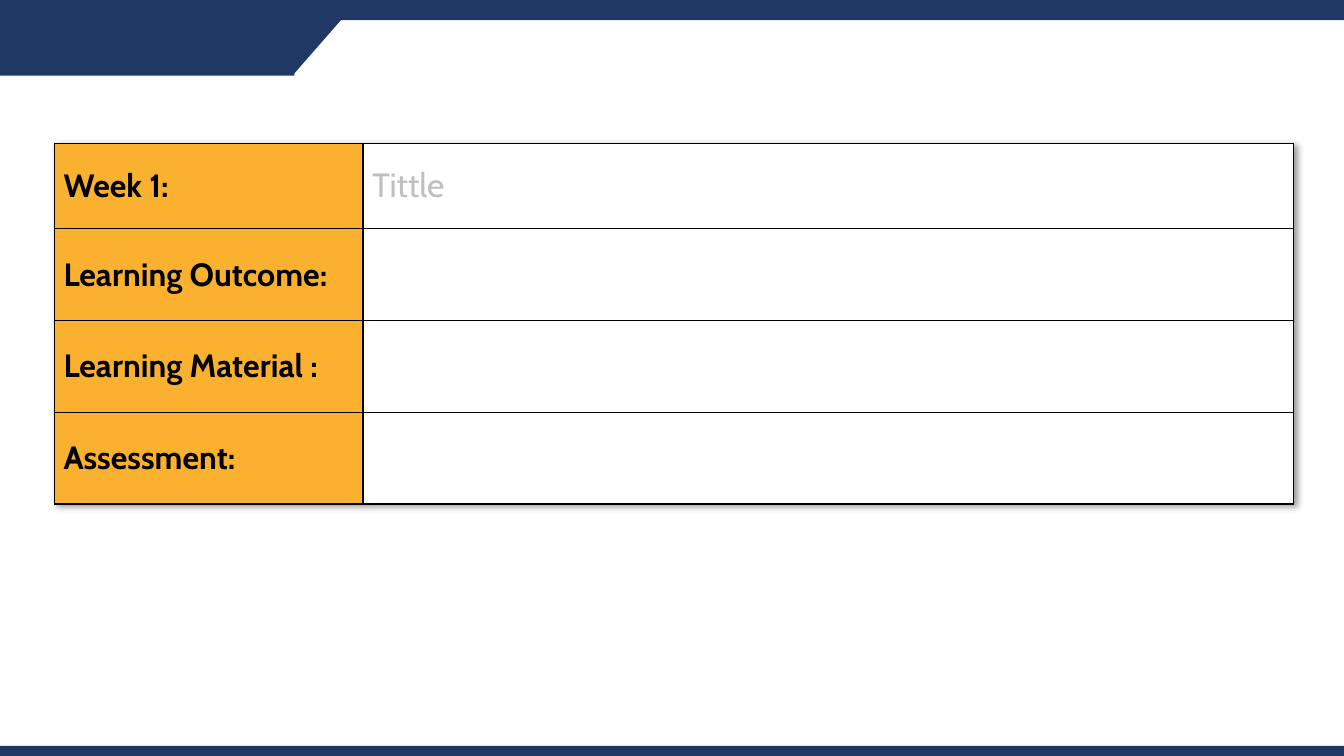
import pptx
import pptx.dml.color
import pptx.enum.shapes
import pptx.enum.text
import pptx.oxml
import pptx.oxml.ns
import pptx.util

NAVY, AMBER, WHITE, BLACK, GRAY = "203864", "FAB12F", "FFFFFF", "000000", "BFBFBF"
FONT = "Cabin"
ROWS = [
    ("Week 1:", "Tittle"),
    ("Learning Outcome:", ""),
    ("Learning Material :", ""),
    ("Assessment:", ""),
]
COLUMN_WIDTHS = [3.06, 9.23]
ROW_HEIGHTS = [0.85] + [0.91] * 3
TABLE_LEFT, TABLE_TOP = 0.54, 1.42
RECT = pptx.enum.shapes.MSO_SHAPE.RECTANGLE
TRIANGLE = pptx.enum.shapes.MSO_SHAPE.RIGHT_TRIANGLE
BANDS = [
    (RECT, -0.03, 0.02, 2.95, 0.73),
    (RECT, 0, 0, 13.41, 0.2),
    (TRIANGLE, 2.91, 0.1, 0.56, 0.64),
    (RECT, -0.04, 7.4, 13.41, 0.1),
]
NS = pptx.oxml.ns.nsdecls("a")
inch = pptx.util.Inches


def rgb(value):
    return pptx.dml.color.RGBColor.from_string(value)


def add_band(slide, kind, *box):
    s = slide.shapes.add_shape(kind, *map(inch, box))
    s.shadow.inherit = False
    s.fill.solid()
    s.fill.fore_color.rgb = rgb(NAVY)
    s.line.fill.background()
    if kind == TRIANGLE:
        s._element.spPr.xfrm.set("flipV", "1")


def set_borders(cell, widths):
    tcPr = cell._tc.get_or_add_tcPr()
    for i, (side, width) in enumerate(widths.items()):
        tcPr.insert(i, pptx.oxml.parse_xml(
            f'<a:ln{side} {NS} w="{pptx.util.Pt(width)}"><a:solidFill>'
            f'<a:srgbClr val="{BLACK}"/></a:solidFill></a:ln{side}>'))


def fill_cell(cell, text, column):
    label = column == 0
    cell.fill.solid()
    cell.fill.fore_color.rgb = rgb(AMBER if label else WHITE)
    cell.vertical_anchor = pptx.enum.text.MSO_ANCHOR.MIDDLE
    cell.margin_left = cell.margin_right = inch(0.09)
    cell.margin_top = cell.margin_bottom = inch(0.04)
    set_borders(cell, {"L": 1.5 if label else 1, "R": 1 if label else 1.5, "T": 1, "B": 1})
    if text:
        r = cell.text_frame.paragraphs[0].add_run()
        r.text = text
        r.font.name = FONT
        r.font.size = pptx.util.Pt(23 if label else 24)
        r.font.bold = label
        r.font.color.rgb = rgb(BLACK if label else GRAY)


def add_plan(slide):
    box = (TABLE_LEFT, TABLE_TOP, sum(COLUMN_WIDTHS), sum(ROW_HEIGHTS))
    table = slide.shapes.add_table(len(ROWS), len(COLUMN_WIDTHS), *map(inch, box)).table
    table.first_row = table.horz_banding = False
    table._tbl.tblPr.insert(0, pptx.oxml.parse_xml(
        f'<a:effectLst {NS}><a:outerShdw blurRad="50800" dist="38100" dir="2700000" '
        f'algn="tl" rotWithShape="0"><a:srgbClr val="{BLACK}"><a:alpha val="40000"/>'
        '</a:srgbClr></a:outerShdw></a:effectLst>'))
    for column, width in zip(table.columns, COLUMN_WIDTHS):
        column.width = inch(width)
    for i, (texts, height) in enumerate(zip(ROWS, ROW_HEIGHTS)):
        table.rows[i].height = inch(height)
        for j, text in enumerate(texts):
            fill_cell(table.cell(i, j), text, j)


def main():
    prs = pptx.Presentation()
    prs.slide_width, prs.slide_height = inch(13.33), inch(7.5)
    slide = prs.slides.add_slide(prs.slide_layouts[6])
    for band in BANDS:
        add_band(slide, *band)
    add_plan(slide)
    prs.save("out.pptx")


if __name__ == "__main__":
    main()
